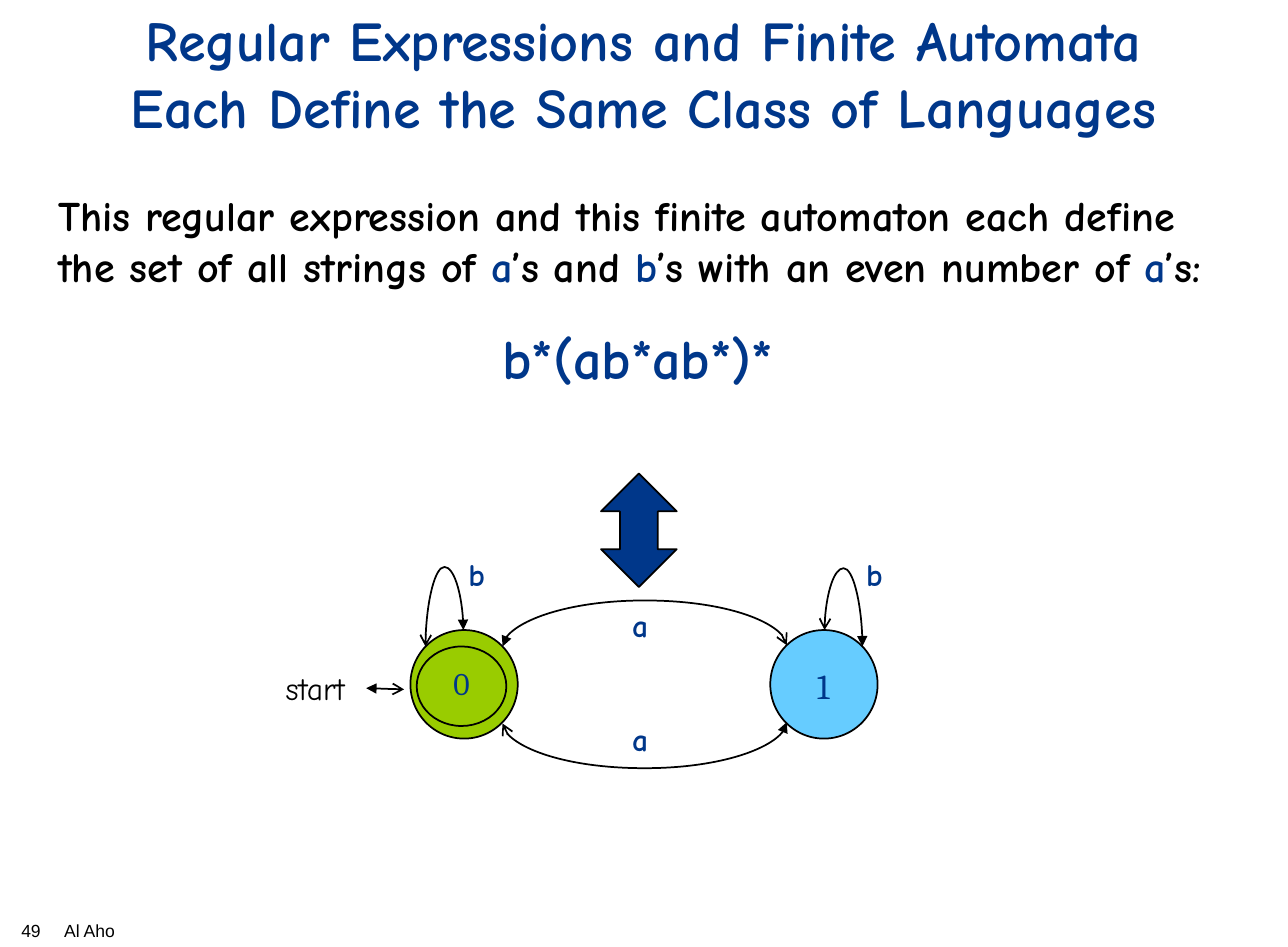
from dataclasses import dataclass

import pptx
import pptx.util
import pptx.dml.color
import pptx.enum.shapes
import pptx.enum.text
import pptx.oxml.ns
import pptx.oxml.xmlchemy

Inches = pptx.util.Inches
Pt = pptx.util.Pt
RGBColor = pptx.dml.color.RGBColor
MSO_SHAPE = pptx.enum.shapes.MSO_SHAPE
MSO_CONNECTOR = pptx.enum.shapes.MSO_CONNECTOR
MSO_ANCHOR = pptx.enum.text.MSO_ANCHOR
MSO_AUTO_SIZE = pptx.enum.text.MSO_AUTO_SIZE
PP_ALIGN = pptx.enum.text.PP_ALIGN
OxmlElement = pptx.oxml.xmlchemy.OxmlElement
qn = pptx.oxml.ns.qn

NAVY = RGBColor(0x00, 0x37, 0x8A)
BLACK = RGBColor(0, 0, 0)
GREEN = RGBColor(0x99, 0xCC, 0x00)
SKY = RGBColor(0x66, 0xCC, 0xFF)
COMIC = "Comic Neue"
CAMBRIA = "Cambria"


@dataclass
class Figure:
    kind: MSO_SHAPE
    left: float
    top: float
    width: float
    height: float
    fill: RGBColor
    text: str = ""


@dataclass
class Label:
    text: str
    left: float
    top: float
    width: float
    height: float = 0.4
    size: int = 18
    font: str = COMIC
    color: RGBColor = NAVY
    bold: bool = True


@dataclass
class Arc:
    begin: tuple[float, float]
    end: tuple[float, float]
    peak: float
    rotation: int


FIGURES = [
    Figure(MSO_SHAPE.OVAL, 3.25, 4.99, 0.85, 0.86, GREEN),
    Figure(MSO_SHAPE.OVAL, 6.1, 4.99, 0.85, 0.86, SKY),
    Figure(MSO_SHAPE.OVAL, 3.3, 5.12, 0.71, 0.63, GREEN, "0"),
    Figure(MSO_SHAPE.UP_DOWN_ARROW, 4.76, 3.75, 0.6, 0.9, NAVY),
]
ARCS = [
    Arc((3.98, 5.12), (6.23, 5.11), 4.75, 90),
    Arc((6.23, 5.72), (3.98, 5.73), 6.09, 90),
    Arc((3.67, 4.99), (3.37, 5.12), 4.49, 270),
    Arc((6.83, 5.12), (6.53, 4.99), 4.5, 270),
]
LABELS = [
    Label("1", 6.34, 5.21, 0.36, 0.44, 20, CAMBRIA, bold=False),
    Label(" a", 4.8, 4.75, 0.45),
    Label(" a", 4.8, 5.65, 0.45),
    Label("b", 3.6, 4.35, 0.35),
    Label("b", 6.75, 4.35, 0.35),
]
START = Label("start", 2.09, 5.25, 0.81, color=BLACK, bold=False)
SENTENCE = [
    ("This regular expression and this finite automaton each define "
     "the set of all strings of ", BLACK),
    ("a", NAVY), ("’s and ", BLACK), ("b", NAVY),
    ("’s with an even number of ", BLACK), ("a", NAVY), ("’s:", BLACK),
]


def style(font, name: str, size: int, color: RGBColor, bold: bool = False) -> None:
    font.name = name
    font.size = Pt(size)
    font.color.rgb = color
    font.bold = bold


def place(sp, left: float, top: float, width: float, height: float) -> None:
    sp.left, sp.top = Inches(left), Inches(top)
    sp.width, sp.height = Inches(width), Inches(height)


def add_figure(shapes, fig: Figure) -> None:
    sp = shapes.add_shape(fig.kind, Inches(fig.left), Inches(fig.top),
                          Inches(fig.width), Inches(fig.height))
    sp.shadow.inherit = False
    sp.fill.solid()
    sp.fill.fore_color.rgb = fig.fill
    sp.line.color.rgb = BLACK
    sp.line.width = Pt(1)
    if fig.text:
        tf = sp.text_frame
        tf.text = fig.text
        tf.vertical_anchor = MSO_ANCHOR.TOP
        tf.paragraphs[0].alignment = PP_ALIGN.CENTER
        style(tf.paragraphs[0].runs[0].font, CAMBRIA, 18, NAVY)


def add_label(shapes, label: Label):
    sp = shapes.add_textbox(Inches(label.left), Inches(label.top),
                            Inches(label.width), Inches(label.height))
    tf = sp.text_frame
    tf.word_wrap = False
    tf.text = label.text
    p = tf.paragraphs[0]
    p.alignment = PP_ALIGN.CENTER
    style(p.runs[0].font, label.font, label.size, label.color, label.bold)
    return sp


def add_arrow(shapes, kind: MSO_CONNECTOR, x1: float, y1: float, x2: float, y2: float):
    cx = shapes.add_connector(kind, Inches(x1), Inches(y1), Inches(x2), Inches(y2))
    cx.line.color.rgb = BLACK
    cx.line.width = Pt(1)
    spPr = cx._element.spPr
    ln = spPr.find(qn("a:ln"))
    for tag, head in (("a:headEnd", "triangle"), ("a:tailEnd", "arrow")):
        end = OxmlElement(tag)
        end.set("type", head)
        ln.append(end)
    spPr.append(OxmlElement("a:effectLst"))
    return cx


def add_arc(shapes, arc: Arc) -> None:
    (x1, y1), (x2, y2) = arc.begin, arc.end
    sign = 1 if arc.rotation == 90 else -1
    mid_x, mid_y = (x1 + x2) / 2, (y1 + y2) / 2
    half_x, half_y = sign * (y2 - y1) / 2, -sign * (x2 - x1) / 2
    cx = add_arrow(shapes, MSO_CONNECTOR.CURVE, mid_x - half_x, mid_y - half_y,
                   mid_x + half_x, mid_y + half_y)
    spPr = cx._element.spPr
    spPr.find(qn("a:xfrm")).set("rot", str(arc.rotation * 60000))
    gd = OxmlElement("a:gd")
    gd.set("name", "adj1")
    gd.set("fmla", f"val {round((arc.peak - y1) / (y2 - y1) * 100000)}")
    spPr.find(qn("a:prstGeom")).get_or_add_avLst().append(gd)


def add_footer(shapes) -> None:
    sp = shapes.add_textbox(Inches(0.07), Inches(7.25), Inches(2.18), Inches(0.25))
    sp.text_frame.word_wrap = True
    sp.text_frame.text = "49\tAl Aho"
    p = sp.text_frame.paragraphs[0]
    tabs = OxmlElement("a:tabLst")
    tab = OxmlElement("a:tab")
    tab.set("pos", str(Inches(0.34)))
    tab.set("algn", "l")
    tabs.append(tab)
    p._p.get_or_add_pPr().append(tabs)
    p.line_spacing = Pt(11)
    style(p.runs[0].font, "Arial", 10, BLACK)


def fill_title(sp) -> None:
    place(sp, 0.3, -0.05, 9.6, 1.25)
    tf = sp.text_frame
    tf.auto_size = MSO_AUTO_SIZE.NONE
    tf.vertical_anchor = MSO_ANCHOR.MIDDLE
    p = tf.paragraphs[0]
    p.text = ("Regular Expressions and Finite Automata\v"
              "Each Define the Same Class of Languages")
    p.alignment = PP_ALIGN.CENTER
    for r in p.runs:
        style(r.font, COMIC, 32, NAVY, True)


def fill_body(sp) -> None:
    place(sp, 0.3, 1.45, 9.6, 5.6)
    tf = sp.text_frame
    tf.auto_size = MSO_AUTO_SIZE.NONE
    sentence, formula = tf.paragraphs[0], tf.add_paragraph()
    for p, space, align in ((sentence, 0, PP_ALIGN.LEFT), (formula, 19, PP_ALIGN.CENTER)):
        pPr = p._p.get_or_add_pPr()
        pPr.set("marL", str(Inches(0.06)))
        pPr.set("indent", "0")
        pPr.append(OxmlElement("a:buNone"))
        p.space_before = Pt(space)
        p.alignment = align
    for text, color in SENTENCE:
        r = sentence.add_run()
        r.text = text
        style(r.font, COMIC, 24, color, True)
    formula.text = "b*(ab*ab*)* "
    style(formula.runs[0].font, COMIC, 32, NAVY, True)


def main() -> None:
    prs = pptx.Presentation()
    prs.slide_width, prs.slide_height = Inches(10.2), Inches(7.5)
    s = prs.slides.add_slide(prs.slide_layouts[1])
    fill_title(s.shapes.title)
    fill_body(s.placeholders[1])
    add_footer(s.shapes)
    for fig in FIGURES:
        add_figure(s.shapes, fig)
    for arc in ARCS:
        add_arc(s.shapes, arc)
    for label in LABELS:
        add_label(s.shapes, label)
    start = add_label(s.shapes, START)
    cx = add_arrow(s.shapes, MSO_CONNECTOR.STRAIGHT, 2.9, 5.45, 3.2, 5.46)
    cx.begin_connect(start, 3)
    prs.save("out.pptx")


if __name__ == "__main__":
    main()
